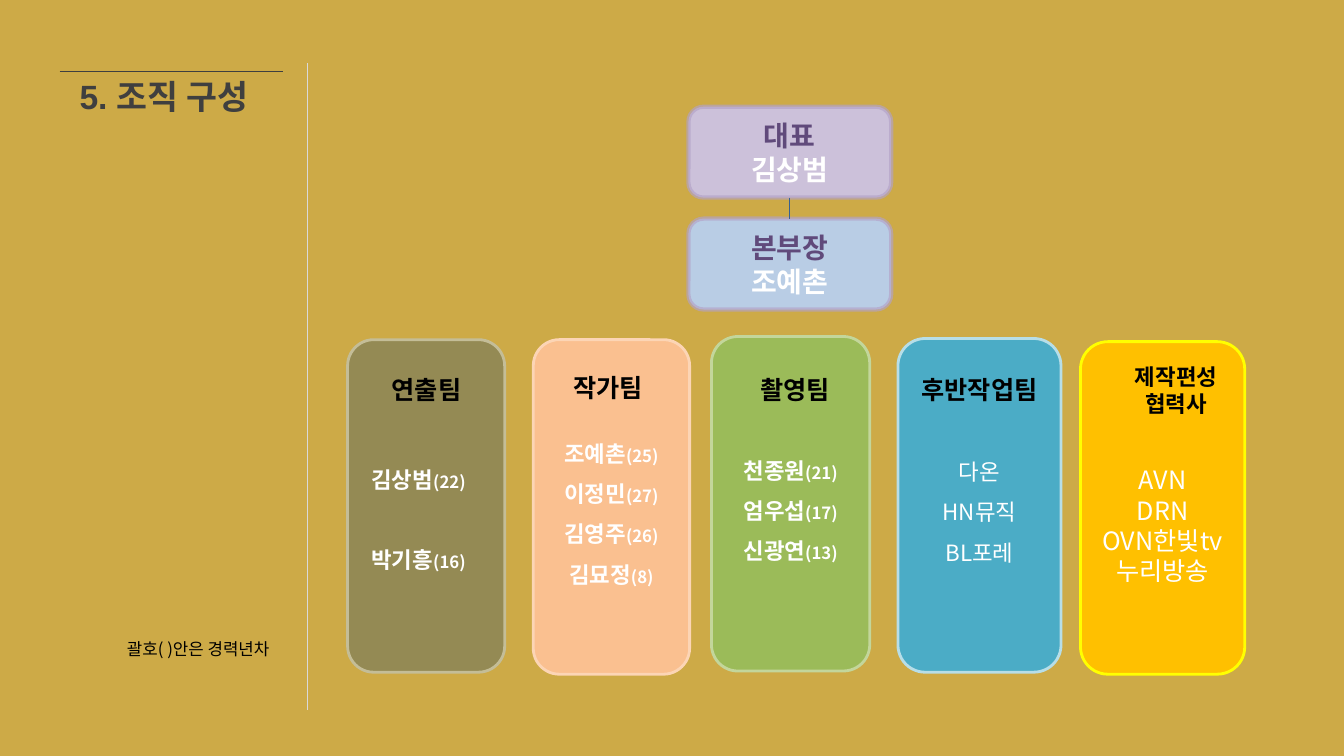
"""Builds the organisation slide: two leaders above five team cards."""
import dataclasses

import lxml.etree
import pptx
import pptx.dml.color
import pptx.enum.shapes
import pptx.enum.text
import pptx.oxml.ns
import pptx.util

Cm, Pt = pptx.util.Cm, pptx.util.Pt
RGB = pptx.dml.color.RGBColor.from_string
qn = pptx.oxml.ns.qn
ALIGN = pptx.enum.text.PP_ALIGN
ANCHOR = pptx.enum.text.MSO_ANCHOR


@dataclasses.dataclass(frozen=True)
class Theme:
    font: str = "Noto Sans CJK KR"
    title_font: str = "Arial"
    background: str = "CDAA47"
    title: str = "3F3F3F"
    divider: str = "D9D9D9"
    link: str = "376092"
    ink: str = "000000"
    light: str = "FFFFFF"
    role: str = "604A7B"
    leader_line: str = "B3A2C7"
    ceo: str = "CCC1DA"
    director: str = "B9CDE5"
    directing: tuple = ("948A54", "C4BD97")
    writing: tuple = ("FAC090", "FCD5B5")
    filming: tuple = ("9BBB59", "C3D69B")
    post: tuple = ("4BACC6", "B7DEE8")
    partners: tuple = ("FFC000", "FFFF00")
    title_size: int = 24
    leader_size: int = 20
    heading_size: int = 18
    member_size: int = 16
    small_size: int = 12


theme = Theme()


def write(frame, lines, size, color, bold=False, align=ALIGN.CENTER, spacing=1.0, font=theme.font):
    """Fill a frame, one paragraph a line; a line is a text or a (name, years) pair."""
    for number, line in enumerate(lines):
        paragraph = frame.add_paragraph() if number else frame.paragraphs[0]
        paragraph.alignment = align
        paragraph.line_spacing = spacing
        paragraph.font.name = font
        paragraph.font.bold = bold
        paragraph.font.color.rgb = RGB(color)
        east_asian = lxml.etree.SubElement(paragraph._p.pPr.find(qn("a:defRPr")), qn("a:ea"))
        east_asian.set("typeface", theme.font)
        if isinstance(line, str):
            paragraph.font.size = Pt(size)
            paragraph.add_run().text = line
        else:
            for part, part_size in zip(line, (size, theme.small_size)):
                run = paragraph.add_run()
                run.text = part
                run.font.size = Pt(part_size)


def add_card(left, top, width, height, fill, line, line_width):
    """Add a rounded card with its text centred vertically."""
    card = slide.shapes.add_shape(
        pptx.enum.shapes.MSO_SHAPE.ROUNDED_RECTANGLE, Cm(left), Cm(top), Cm(width), Cm(height))
    card.shadow.inherit = False
    card.fill.solid()
    card.fill.fore_color.rgb = RGB(fill)
    card.line.color.rgb = RGB(line)
    card.line.width = Pt(line_width)
    card.text_frame.word_wrap = True
    card.text_frame.vertical_anchor = ANCHOR.MIDDLE
    return card


deck = pptx.Presentation()
deck.slide_width, deck.slide_height = Cm(33.87), Cm(19.05)
slide = deck.slides.add_slide(deck.slide_layouts[5])
slide.background.fill.solid()
slide.background.fill.fore_color.rgb = RGB(theme.background)

title = slide.shapes.title
title.left, title.top, title.width, title.height = Cm(1.75), Cm(1.78), Cm(5.11), Cm(1.27)
title.text_frame.word_wrap = False
title.text_frame.vertical_anchor = ANCHOR.TOP
write(title.text_frame, ["5. 조직 구성"], theme.title_size, theme.title, True, ALIGN.LEFT,
      font=theme.title_font)

leaders = []
for top, fill, role, name in (
    (2.69, theme.ceo, "대표", "김상범"),
    (5.51, theme.director, "본부장", "조예촌"),
):
    leader = add_card(17.35, top, 5.11, 2.29, fill, theme.leader_line, 3)
    line_color = leader.line._ln.find(".//" + qn("a:srgbClr"))
    lxml.etree.SubElement(line_color, qn("a:alpha")).set("val", "66000")
    write(leader.text_frame, [role, name], theme.leader_size, theme.light, True)
    leader.text_frame.paragraphs[0].font.color.rgb = RGB(theme.role)
    leaders.append(leader)

teams = [
    ((8.76, 8.56, 3.96, 8.38), theme.directing, [("김상범", "(22)"), ("박기흥", "(16)")],
     theme.member_size, True, 2.0),
    ((13.44, 8.56, 3.94, 8.43), theme.writing,
     [("조예촌", "(25)"), ("이정민", "(27)"), ("김영주", "(26)"), ("김묘정", "(8)")],
     theme.member_size, True, 1.5),
    ((17.93, 8.48, 3.99, 8.43), theme.filming,
     [("천종원", "(21)"), ("엄우섭", "(17)"), ("신광연", "(13)")],
     theme.member_size, True, 1.5),
    ((22.63, 8.53, 4.11, 8.41), theme.post, ["다온", "HN뮤직", "BL포레"],
     theme.member_size, False, 1.5),
    ((27.23, 8.61, 4.14, 8.38), theme.partners, ["AVN", "DRN", "OVN한빛tv", "누리방송"],
     theme.heading_size, False, 1.0),
]
team_frames = []
for place, (fill, line), members, size, bold, spacing in teams:
    team_frame = add_card(*place, fill, line, 2).text_frame
    write(team_frame, members, size, theme.light, bold, spacing=spacing)
    team_frames.append(team_frame)

directing_frame, partners_frame = team_frames[0], team_frames[-1]
directing_frame.margin_left = Cm(0.41)
for member in directing_frame.paragraphs:
    member.alignment = ALIGN.LEFT
directing_frame.paragraphs[1].space_before = Pt(19)
partners_frame.margin_top = Cm(1)
partners_frame.margin_left = partners_frame.margin_right = Cm(0.35)

labels = [
    ((9.53, 9.32, 2.44, 1.02), ["연출팀"], theme.heading_size, True, ALIGN.CENTER, 1.0),
    ((14.1, 9.25, 2.44, 1.02), ["작가팀"], theme.heading_size, True, ALIGN.CENTER, 1.0),
    ((18.82, 9.32, 2.44, 1.02), ["촬영팀"], theme.heading_size, True, ALIGN.CENTER, 1.0),
    ((22.83, 9.32, 3.71, 1.02), ["후반작업팀"], theme.heading_size, True, ALIGN.CENTER, 1.0),
    ((27.94, 9.02, 3.4, 1.63), ["제작편성", "협력사"], theme.member_size, True, ALIGN.CENTER, 1.0),
    ((2.95, 15.72, 4.52, 0.91), ["괄호( )안은 경력년차"], theme.small_size, False, ALIGN.LEFT, 1.5),
]
for place, lines, size, bold, align, spacing in labels:
    label = slide.shapes.add_textbox(*map(Cm, place))
    label.text_frame.word_wrap = True
    write(label.text_frame, lines, size, theme.ink, bold, align, spacing)

rules = []
for start_x, start_y, end_x, end_y, color, width in (
    (1.5, 1.8, 7.14, 1.8, theme.title, 1),
    (7.75, 1.6, 7.75, 17.88, theme.divider, 0.75),
    (19.9, 4.98, 19.9, 5.51, theme.link, 0.75),
):
    rule = slide.shapes.add_connector(
        pptx.enum.shapes.MSO_CONNECTOR.STRAIGHT, Cm(start_x), Cm(start_y), Cm(end_x), Cm(end_y))
    rule.line.color.rgb = RGB(color)
    rule.line.width = Pt(width)
    lxml.etree.SubElement(rule._element.spPr, qn("a:effectLst"))
    rules.append(rule)

ceo, director = leaders
rules[-1].begin_connect(ceo, 2)
rules[-1].end_connect(director, 0)

deck.save("out.pptx")
